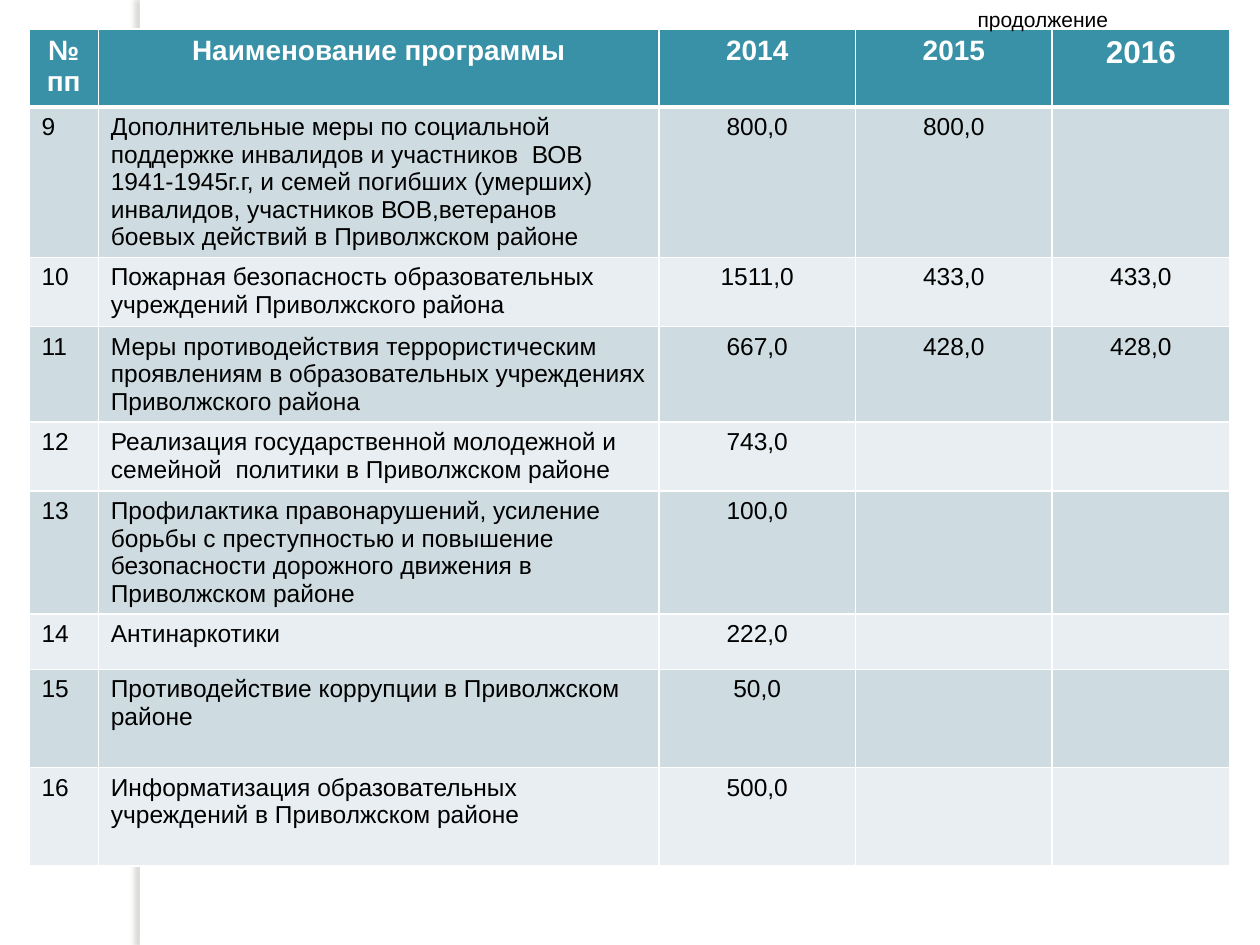
import pptx
import pptx.util
import pptx.dml.color
import pptx.enum.shapes
import pptx.enum.text
import pptx.oxml
import pptx.oxml.ns

Inches = pptx.util.Inches
Pt = pptx.util.Pt
RGB = pptx.dml.color.RGBColor.from_string
ALIGN = pptx.enum.text.PP_ALIGN
NS = pptx.oxml.ns.nsdecls("a")

theme = {
    "font": "Arial", "white": "FFFFFF", "black": "000000", "head": "3891A7",
    "bands": ["CEDCE1", "E8EEF1"], "shade": "736F63",
    "note": 12, "body": 14, "title": 16, "last": 18,
}


def write(frame, text, size=theme["body"], color=theme["black"], bold=False, align=ALIGN.LEFT):
    para = frame.paragraphs[0]
    para.alignment = align
    run = para.add_run()
    run.text = text
    run.font.name = theme["font"]
    run.font.size = Pt(size)
    run.font.bold = bold
    run.font.color.rgb = RGB(color)


def edge(cell, top, bottom):
    props = cell._tc.get_or_add_tcPr()
    for spot, (side, width) in enumerate(zip("LRTB", (1, 1, top, bottom))):
        line = pptx.oxml.parse_xml(
            f'<a:ln{side} {NS} w="{Pt(width)}"><a:solidFill>'
            f'<a:srgbClr val="{theme["white"]}"/></a:solidFill></a:ln{side}>')
        props.insert(spot, line)


deck = pptx.Presentation()
deck.slide_width, deck.slide_height = Inches(10), Inches(7.5)
slide = deck.slides.add_slide(deck.slide_layouts[6])

strip = slide.shapes.add_shape(
    pptx.enum.shapes.MSO_SHAPE.RECTANGLE, Inches(1.11), 0, Inches(0.08), Inches(7.5))
strip.fill.solid()
strip.fill.fore_color.rgb = RGB(theme["white"])
strip.line.fill.background()
strip._element.spPr.append(pptx.oxml.parse_xml(
    f'<a:effectLst {NS}><a:outerShdw blurRad="{Pt(3)}" dist="{Pt(3)}" dir="10800000" '
    f'algn="tl" rotWithShape="0"><a:srgbClr val="{theme["shade"]}">'
    '<a:alpha val="25000"/></a:srgbClr></a:outerShdw></a:effectLst>'))

rows = [
    ("№пп", "Наименование программы", "2014", "2015", "2016"),
    ("9", "Дополнительные меры по социальной поддержке инвалидов и участников  ВОВ "
     "1941-1945г.г, и семей погибших (умерших) инвалидов, участников ВОВ,ветеранов "
     "боевых действий в Приволжском районе", "800,0", "800,0", ""),
    ("10", "Пожарная безопасность образовательных учреждений Приволжского района",
     "1511,0", "433,0", "433,0"),
    ("11", "Меры противодействия террористическим проявлениям в образовательных "
     "учреждениях Приволжского района", "667,0", "428,0", "428,0"),
    ("12", "Реализация государственной молодежной и семейной  политики в Приволжском районе",
     "743,0", "", ""),
    ("13", "Профилактика правонарушений, усиление борьбы с преступностью и повышение "
     "безопасности дорожного движения в Приволжском районе", "100,0", "", ""),
    ("14", "Антинаркотики", "222,0", "", ""),
    ("15", "Противодействие коррупции в Приволжском районе", "50,0", "", ""),
    ("16", "Информатизация образовательных учреждений в Приволжском районе", "500,0", "", ""),
]
widths = [0.55, 4.45, 1.56, 1.56, 1.41]
heights = [0.62, 1.19, 0.55, 0.55, 0.55, 0.55, 0.44, 0.78, 0.78]

table = slide.shapes.add_table(
    len(rows), len(widths), Inches(0.23), Inches(0.23),
    Inches(sum(widths)), Inches(sum(heights))).table
for col, width in zip(table.columns, widths):
    col.width = Inches(width)
for row, height in zip(table.rows, heights):
    row.height = Inches(height)

for r, row in enumerate(rows):
    for c, text in enumerate(row):
        cell = table.cell(r, c)
        cell.fill.solid()
        cell.fill.fore_color.rgb = RGB(theme["bands"][(r - 1) % 2] if r else theme["head"])
        edge(cell, top=3 if r == 1 else 1, bottom=1 if r else 3)
        if not r:
            size = theme["last"] if c == len(row) - 1 else theme["title"]
            write(cell.text_frame, text, size=size, color=theme["white"],
                  bold=True, align=ALIGN.CENTER)
        elif text:
            write(cell.text_frame, text, align=ALIGN.CENTER if c > 1 else ALIGN.LEFT)

note = slide.shapes.add_textbox(Inches(7.66), 0, Inches(1.95), Inches(0.3)).text_frame
note.word_wrap = True
note.auto_size = pptx.enum.text.MSO_AUTO_SIZE.SHAPE_TO_FIT_TEXT
write(note, "продолжение", size=theme["note"])

deck.save("out.pptx")
